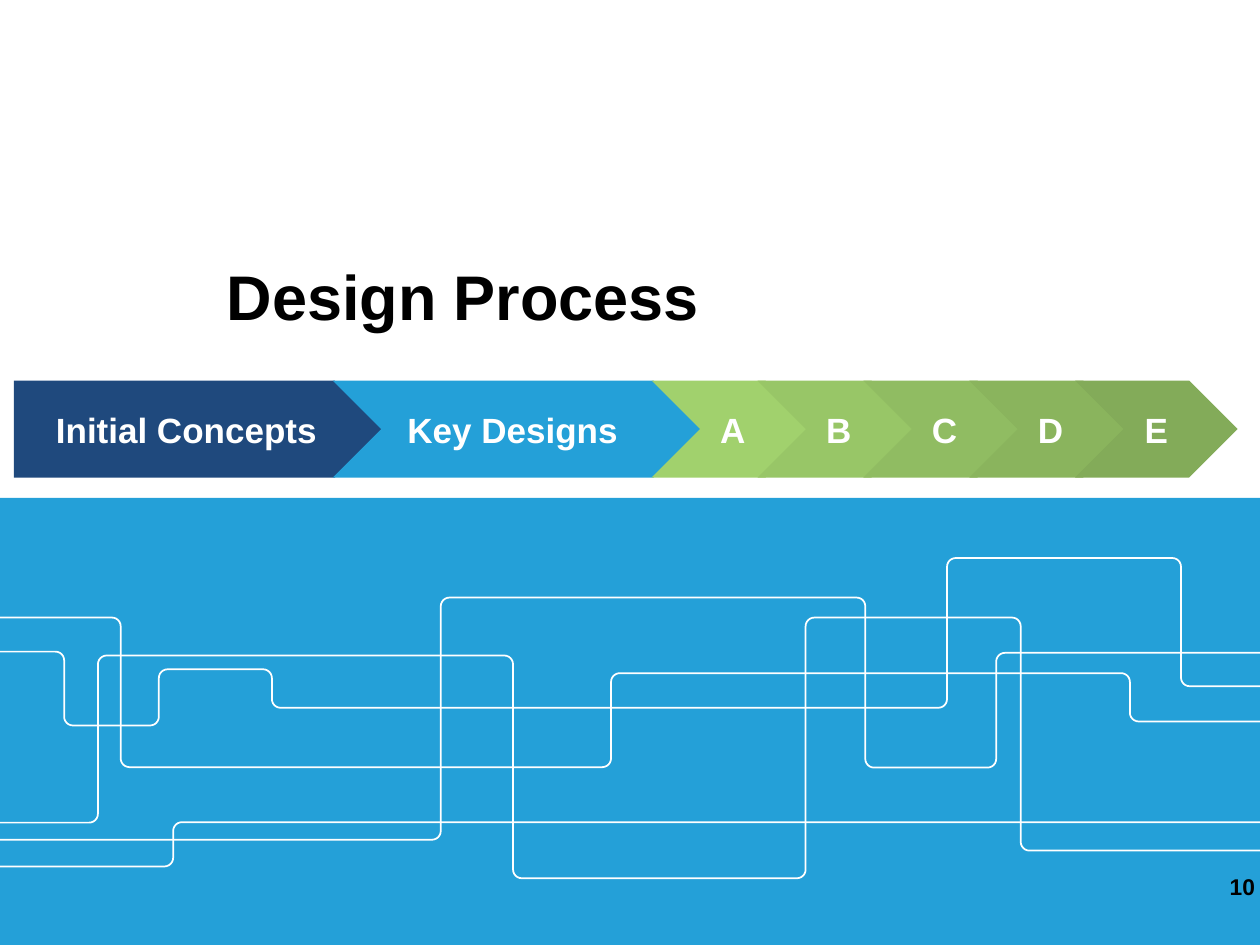
from math import cos, pi, sin

from pptx import Presentation
from pptx.dml.color import RGBColor
from pptx.enum.shapes import MSO_SHAPE
from pptx.enum.text import MSO_ANCHOR, PP_ALIGN
from pptx.util import Pt

RECTANGLE = MSO_SHAPE.RECTANGLE
PENTAGON = MSO_SHAPE.PENTAGON
CHEVRON = MSO_SHAPE.CHEVRON
TOP = MSO_ANCHOR.TOP
MIDDLE = MSO_ANCHOR.MIDDLE
LEFT = PP_ALIGN.LEFT
CENTER = PP_ALIGN.CENTER
RIGHT = PP_ALIGN.RIGHT

WHITE = RGBColor(0xFF, 0xFF, 0xFF)
BLACK = RGBColor(0x00, 0x00, 0x00)
BLUE = RGBColor(0x24, 0xA0, 0xD8)
NAVY = RGBColor(0x1F, 0x49, 0x7D)
GREENS = [
    RGBColor(0xA1, 0xD1, 0x6D),
    RGBColor(0x98, 0xC6, 0x67),
    RGBColor(0x90, 0xBC, 0x62),
    RGBColor(0x8A, 0xB4, 0x5D),
    RGBColor(0x83, 0xAB, 0x59),
]

SLIDE_WIDTH, SLIDE_HEIGHT = 720, 540
CORNER_RADIUS = 5
ARC_STEPS = 6

CIRCUITS = [
    (372.4, [(36.7, 414.6), (90.8, 382.5), (155.4, 404.5), (541.2, 318.9), (674.9, 392.2)]),
    (470.1, [(56, 374.6), (293.2, 501.9), (460.4, 352.9), (583.3, 486.1)]),
    (352.9, [(69, 438.4), (349.2, 384.7), (645.7, 412.3)]),
    (479.9, [(251.9, 341.5), (494.5, 438.7), (569.3, 373.1)]),
    (495.1, [(99, 469.8)]),
]

STAGES = [
    ("Initial Concepts", PENTAGON, NAVY, 211, 182.2),
    ("Key Designs ", CHEVRON, BLUE, 211, 182.2),
] + [(letter, CHEVRON, color, 92.8, 60.5) for letter, color in zip("ABCDE", GREENS)]


def write_text(shape, text, size, color, alignment, anchor, inset, line_spacing=1.0):
    frame = shape.text_frame
    frame_format = {
        "word_wrap": True,
        "vertical_anchor": anchor,
        "margin_left": Pt(inset),
        "margin_top": Pt(inset),
        "margin_right": Pt(inset),
        "margin_bottom": Pt(inset),
    }
    for name, value in frame_format.items():
        setattr(frame, name, value)
    paragraph = frame.paragraphs[0]
    paragraph.text = text
    paragraph.alignment = alignment
    paragraph.line_spacing = line_spacing
    for name, value in {"name": "Arial", "size": Pt(size), "bold": True}.items():
        setattr(paragraph.font, name, value)
    paragraph.font.color.rgb = color


def add_filled_shape(slide, kind, box, color):
    shape = slide.shapes.add_shape(kind, *map(Pt, box))
    shape.shadow.inherit = False
    shape.fill.solid()
    shape.fill.fore_color.rgb = color
    shape.line.fill.background()
    return shape


def circuit_points(left, right, start_y, turns):
    angles = [pi / 2 * step / ARC_STEPS for step in range(ARC_STEPS + 1)]
    arc = [(CORNER_RADIUS * (1 - sin(angle)), CORNER_RADIUS * (1 - cos(angle))) for angle in angles]
    points = [(left, start_y)]
    y = start_y
    for x, next_y in turns:
        direction = 1 if next_y > y else -1
        points += [(x - dx, y + direction * dy) for dx, dy in arc]
        points += [(x + dx, next_y - direction * dy) for dx, dy in reversed(arc)]
        y = next_y
    points.append((right, y))
    return points


def add_circuit_panel(slide, left, top, width, height):
    add_filled_shape(slide, RECTANGLE, (left, top, width, height), BLUE)
    for start_y, turns in CIRCUITS:
        points = [(Pt(x), Pt(y)) for x, y in circuit_points(left, left + width, start_y, turns)]
        builder = slide.shapes.build_freeform(*points[0])
        builder.add_line_segments(points[1:], close=False)
        circuit = builder.convert_to_shape()
        circuit.shadow.inherit = False
        circuit.fill.background()
        circuit.line.color.rgb = WHITE
        circuit.line.width = Pt(1)


def add_process(slide, left, top, height):
    for label, kind, color, width, pitch in STAGES:
        stage = add_filled_shape(slide, kind, (left, top, width, height), color)
        stage.adjustments[0] = 0.5
        write_text(stage, label, 20, WHITE, CENTER, MIDDLE, 7.2)
        left += pitch


def add_title(slide, left, top, width, height):
    title = slide.shapes.add_textbox(Pt(left), Pt(top), Pt(width), Pt(height))
    write_text(title, "Design Process", 36, BLACK, LEFT, MIDDLE, 7.2, 1.06)


def add_page_number(slide, left, top, width, height):
    number = slide.shapes.add_textbox(Pt(left), Pt(top), Pt(width), Pt(height))
    write_text(number, "10", 13, BLACK, RIGHT, TOP, 0)


def main():
    presentation = Presentation()
    presentation.slide_width = Pt(SLIDE_WIDTH)
    presentation.slide_height = Pt(SLIDE_HEIGHT)
    slide = presentation.slides.add_slide(presentation.slide_layouts[6])
    add_circuit_panel(slide, 0, 284.5, SLIDE_WIDTH, 255.5)
    add_title(slide, 122.4, 126.7, 550, 82)
    add_process(slide, 8, 217.5, 55.4)
    add_page_number(slide, 673.9, 499, 43.2, 41)
    presentation.save("out.pptx")


if __name__ == "__main__":
    main()
